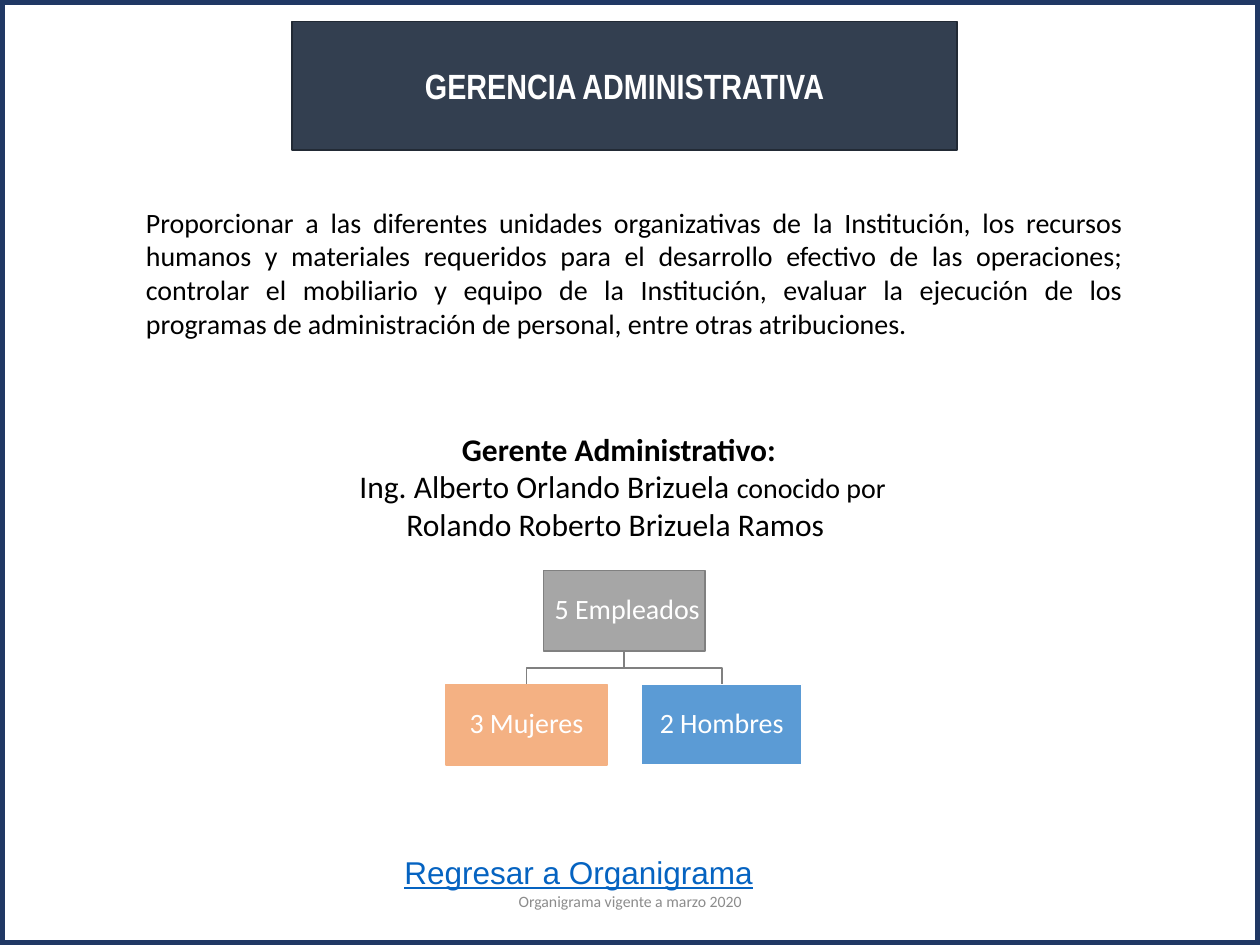
from pptx import Presentation
from pptx.dml.color import RGBColor
from pptx.enum.shapes import MSO_SHAPE
from pptx.enum.text import MSO_ANCHOR, PP_ALIGN
from pptx.util import Pt

SLIDE_W, SLIDE_H = 720, 540
BLACK, WHITE, GRAY = "000000", "FFFFFF", "808080"

TITLE = "GERENCIA ADMINISTRATIVA"
MISSION = (
    "Proporcionar a las diferentes unidades organizativas de la Institución, "
    "los recursos humanos y materiales requeridos para el desarrollo efectivo "
    "de las operaciones; controlar el mobiliario y equipo de la Institución, "
    "evaluar la ejecución de los programas de administración de personal, "
    "entre otras atribuciones."
)
# Each paragraph is a list of (text, size, bold)
MANAGER = [
    [("Gerente Administrativo:", 18, True)],
    [
        (" Ing. Alberto Orlando Brizuela ", 18, False),
        ("conocido por ", 16, False),
        ("Rolando Roberto Brizuela Ramos ", 18, False),
    ],
]
HEADING_RIGHT_INDENT = 21
BACK_LABEL = "Regresar a Organigrama"
FOOTER = "Organigrama vigente a marzo 2020"

# (text, fill, line)
STAFF_TOTAL = (" 5 Empleados", "A6A6A6", GRAY)
STAFF_GROUPS = [
    ("3 Mujeres", "F4B183", "F4B183"),
    ("2 Hombres", "5B9BD5", WHITE),
]
CHART_CENTER, CHART_TOP = 356.6, 326
NODE_W, NODE_H = 92.2, 46.1
GAP_X, GAP_Y = 19.4, 19


def rgb(value):
    return RGBColor.from_string(value)


def style_run(run, size, color=BLACK, font="Calibri", bold=False, underline=False):
    run.font.size = Pt(size)
    run.font.name = font
    run.font.color.rgb = rgb(color)
    run.font.bold = bold
    run.font.underline = underline


def fill_text(shape, text, size, align, anchor=MSO_ANCHOR.TOP, **style):
    frame = shape.text_frame
    frame.word_wrap = True
    frame.vertical_anchor = anchor
    frame.text = text
    paragraph = frame.paragraphs[0]
    paragraph.alignment = align
    style_run(paragraph.runs[0], size, **style)
    return frame


def add_text(slide, box, *args, **style):
    return fill_text(slide.shapes.add_textbox(*map(Pt, box)), *args, **style)


def outline(shape, color, width):
    shape.shadow.inherit = False
    shape.line.color.rgb = rgb(color)
    shape.line.width = Pt(width)


def add_rect(slide, box, fill, line, line_width=1):
    rect = slide.shapes.add_shape(MSO_SHAPE.RECTANGLE, *map(Pt, box))
    outline(rect, line, line_width)
    if fill:
        rect.fill.solid()
        rect.fill.fore_color.rgb = rgb(fill)
    else:
        rect.fill.background()
    return rect


def add_manager(slide, box):
    frame = slide.shapes.add_textbox(*map(Pt, box)).text_frame
    frame.word_wrap = True
    for index, runs in enumerate(MANAGER):
        paragraph = frame.add_paragraph() if index else frame.paragraphs[0]
        paragraph.alignment = PP_ALIGN.CENTER
        for text, size, bold in runs:
            run = paragraph.add_run()
            run.text = text
            style_run(run, size, bold=bold)
    heading = frame.paragraphs[0]
    heading._p.get_or_add_pPr().set("marR", str(Pt(HEADING_RIGHT_INDENT)))


def add_node(slide, center, top, text, fill, line):
    node = add_rect(slide, (center - NODE_W / 2, top, NODE_W, NODE_H), fill, line)
    frame = fill_text(node, text, 16, PP_ALIGN.CENTER, MSO_ANCHOR.MIDDLE, color=WHITE)
    frame.margin_left = frame.margin_right = Pt(0.8)
    frame.margin_top = frame.margin_bottom = Pt(0.8)
    frame.paragraphs[0].line_spacing = 0.9


def add_branch(slide, start_x, start_y, end_x, end_y):
    """Draw a line that goes down, across and down again."""
    middle_y = (start_y + end_y) / 2
    builder = slide.shapes.build_freeform(Pt(start_x), Pt(start_y))
    corners = [(start_x, middle_y), (end_x, middle_y), (end_x, end_y)]
    builder.add_line_segments([(Pt(x), Pt(y)) for x, y in corners], close=False)
    branch = builder.convert_to_shape()
    branch.fill.background()
    outline(branch, GRAY, 1)


def add_staff_chart(slide):
    total_bottom = CHART_TOP + NODE_H
    groups_top = total_bottom + GAP_Y
    first_center = CHART_CENTER - (len(STAFF_GROUPS) - 1) * (NODE_W + GAP_X) / 2
    centers = [first_center + i * (NODE_W + GAP_X) for i in range(len(STAFF_GROUPS))]
    for center in centers:
        add_branch(slide, CHART_CENTER, total_bottom, center, groups_top)
    add_node(slide, CHART_CENTER, CHART_TOP, *STAFF_TOTAL)
    for center, group in zip(centers, STAFF_GROUPS):
        add_node(slide, center, groups_top, *group)


def main():
    deck = Presentation()
    deck.slide_width, deck.slide_height = Pt(SLIDE_W), Pt(SLIDE_H)
    slide = deck.slides.add_slide(deck.slide_layouts[6])

    add_rect(slide, (0, 0, SLIDE_W, SLIDE_H), None, "203864", 6)
    add_text(slide, (224, 484, 235.5, 29), BACK_LABEL, 18, PP_ALIGN.LEFT,
             color="0563C1", font="Arial", underline=True)
    banner = add_rect(slide, (167, 12.3, 380, 73.5), "333F50", "222A35")
    fill_text(banner, TITLE, 20, PP_ALIGN.CENTER, MSO_ANCHOR.MIDDLE,
              color=WHITE, font="Arial Narrow", bold=True)
    add_text(slide, (76.3, 113.8, 572.4, 85), MISSION, 16, PP_ALIGN.JUSTIFY)
    add_manager(slide, (190, 242, 348.5, 72.7))
    add_staff_chart(slide)
    add_text(slide, (238.5, 500.5, 243, 28.8), FOOTER, 9, PP_ALIGN.CENTER,
             MSO_ANCHOR.MIDDLE, color="8C8C8C")

    deck.save("out.pptx")


if __name__ == "__main__":
    main()
